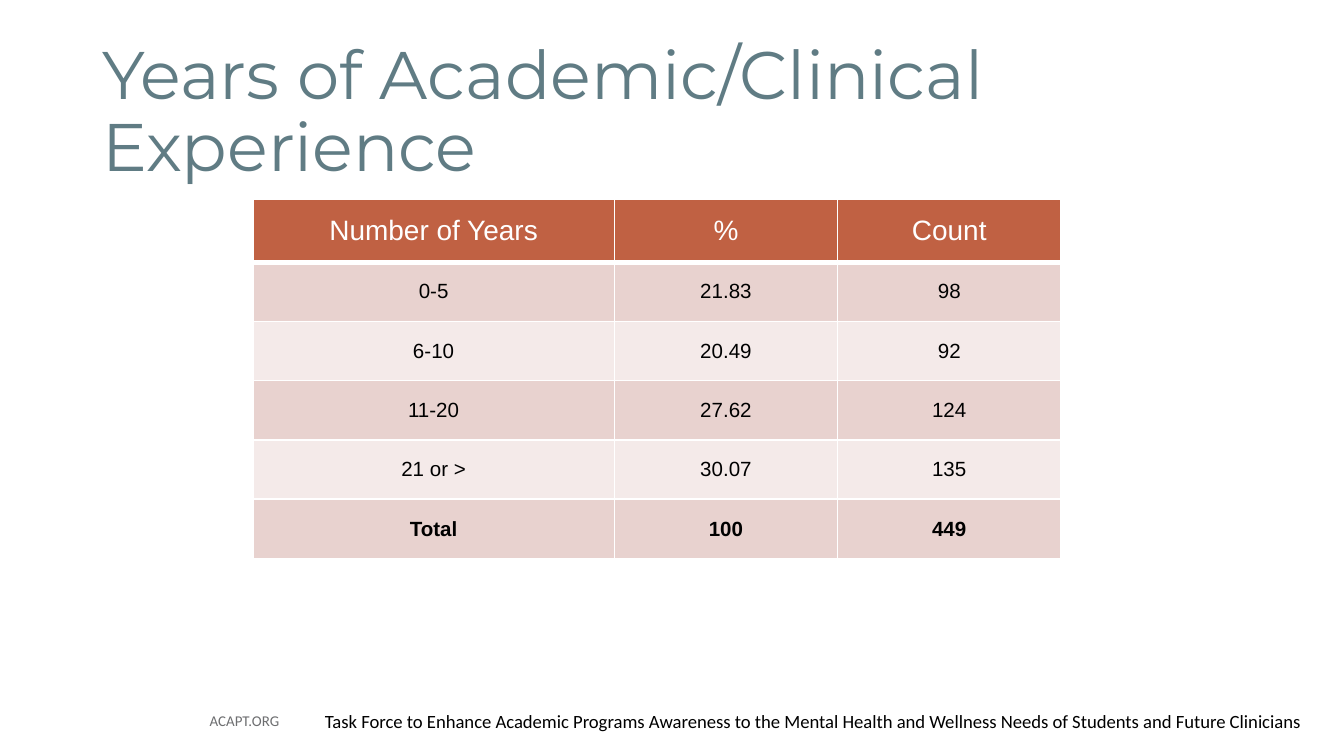
import pptx
import pptx.dml.color
import pptx.enum.text
import pptx.oxml
import pptx.oxml.ns
import pptx.util

Cm = pptx.util.Cm
Pt = pptx.util.Pt
RGBColor = pptx.dml.color.RGBColor
ALIGN = pptx.enum.text.PP_ALIGN
MIDDLE = pptx.enum.text.MSO_ANCHOR.MIDDLE
TOP = pptx.enum.text.MSO_ANCHOR.TOP

SLATE = RGBColor(0x60, 0x7C, 0x84)
RUST = RGBColor(0xC0, 0x61, 0x43)
ROSE = RGBColor(0xE8, 0xD2, 0xCF)
BLUSH = RGBColor(0xF4, 0xEA, 0xE9)
GRAY = RGBColor(0x6D, 0x6E, 0x70)
BLACK = RGBColor(0, 0, 0)
WHITE = RGBColor(0xFF, 0xFF, 0xFF)

HEADING = "Years of Academic/Clinical Experience"
EXPERIENCE = [
    ("Number of Years", "%", "Count"),
    ("0-5", "21.83", "98"),
    ("6-10", "20.49", "92"),
    ("11-20", "27.62", "124"),
    ("21 or >", "30.07", "135"),
    ("Total", "100", "449"),
]
SITE = "ACAPT.ORG"
TASK_FORCE = (
    "Task Force to Enhance Academic Programs Awareness to the Mental Health "
    "and Wellness Needs of Students and Future Clinicians"
)

COLUMN_WIDTHS = (6.83, 4.22, 4.22)
HEADER_HEIGHT = 1.19
ROW_HEIGHT = 1.12
TIGHT = (0.18, 0.1)
ROOMY = (0.25, 0.13)


def set_insets(holder, insets):
    side, end = insets
    holder.margin_left = holder.margin_right = Cm(side)
    holder.margin_top = holder.margin_bottom = Cm(end)


def write(paragraph, words, font, size, color, bold=False, align=ALIGN.LEFT):
    paragraph.alignment = align
    run = paragraph.add_run()
    run.text = words
    run.font.name = font
    run.font.size = Pt(size)
    run.font.bold = bold
    run.font.color.rgb = color


def add_footer(slide, words, place, size, color, insets, anchor, align):
    frame = slide.shapes.add_textbox(*map(Cm, place)).text_frame
    frame.word_wrap = True
    frame.vertical_anchor = anchor
    set_insets(frame, insets)
    write(frame.paragraphs[0], words, "Calibri", size, color, align=align)


def add_borders(cell, bottom):
    properties = cell._tc.get_or_add_tcPr()
    for position, (side, width) in enumerate((("L", 1), ("R", 1), ("T", 1), ("B", bottom))):
        border = pptx.oxml.parse_xml(
            f'<a:ln{side} {pptx.oxml.ns.nsdecls("a")} w="{Pt(width)}">'
            f'<a:solidFill><a:srgbClr val="{WHITE}"/></a:solidFill></a:ln{side}>'
        )
        properties.insert(position, border)


def add_experience_table(slide):
    last = len(EXPERIENCE) - 1
    table = slide.shapes.add_table(
        len(EXPERIENCE), len(COLUMN_WIDTHS), Cm(4.78), Cm(3.76),
        Cm(sum(COLUMN_WIDTHS)), Cm(HEADER_HEIGHT + last * ROW_HEIGHT),
    ).table
    for column, width in zip(table.columns, COLUMN_WIDTHS):
        column.width = Cm(width)
    for number, entries in enumerate(EXPERIENCE):
        header = number == 0
        table.rows[number].height = Cm(HEADER_HEIGHT if header else ROW_HEIGHT)
        fill = RUST if header else ROSE if number % 2 else BLUSH
        for position, words in enumerate(entries):
            cell = table.cell(number, position)
            cell.vertical_anchor = MIDDLE
            set_insets(cell, TIGHT)
            cell.fill.solid()
            cell.fill.fore_color.rgb = fill
            add_borders(cell, 3 if header else 1)
            write(
                cell.text_frame.paragraphs[0], words, "Arial",
                15 if header else 11, WHITE if header else BLACK,
                bold=number == last, align=ALIGN.CENTER,
            )


def main():
    deck = pptx.Presentation()
    deck.slide_width, deck.slide_height = Cm(25.4), Cm(14.28)
    slide = deck.slides.add_slide(deck.slide_layouts[5])

    add_footer(slide, SITE, (3.61, 13.23, 1.85, 0.76), 8, GRAY, TIGHT, MIDDLE, ALIGN.RIGHT)
    add_footer(slide, TASK_FORCE, (5.89, 13.28, 19.76, 0.69), 10, BLACK, ROOMY, TOP, ALIGN.LEFT)

    title = slide.shapes.title
    title.left, title.top, title.width, title.height = map(Cm, (1.75, 0.76, 21.89, 2.77))
    frame = title.text_frame
    frame.auto_size = pptx.enum.text.MSO_AUTO_SIZE.NONE
    frame.word_wrap = True
    frame.vertical_anchor = MIDDLE
    set_insets(frame, TIGHT)
    frame.paragraphs[0].line_spacing = 0.9
    write(frame.paragraphs[0], HEADING, "Montserrat", 36, SLATE)

    add_experience_table(slide)
    deck.save("out.pptx")


if __name__ == "__main__":
    main()
